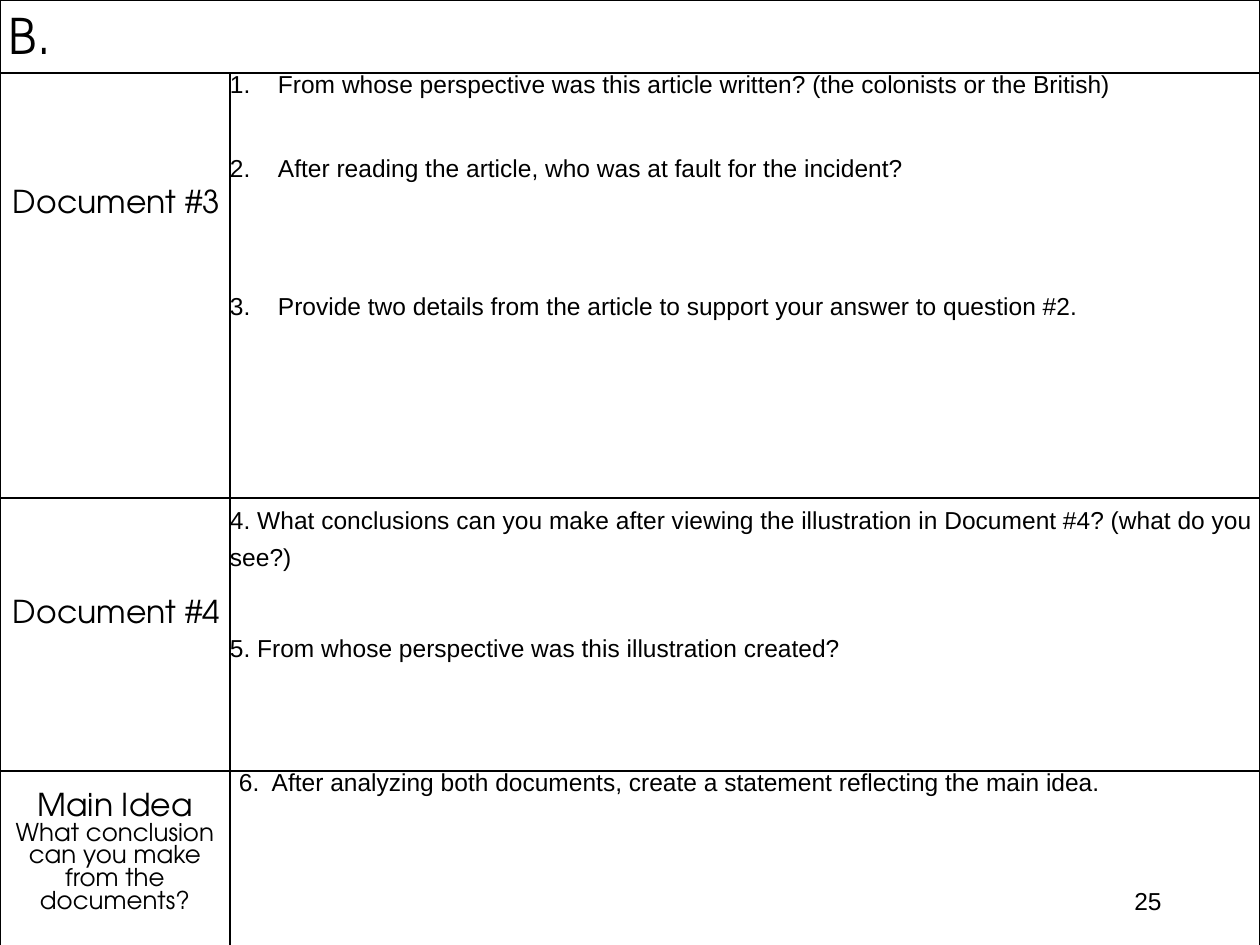
"""Builds a worksheet slide with questions on two documents and their main idea."""
from lxml import etree
from pptx import Presentation
from pptx import util as u
from pptx.dml.color import RGBColor
from pptx.enum import text
from pptx.oxml import ns


class Theme:
    ink = RGBColor(0, 0, 0)
    head = "TeX Gyre Adventor"
    body = "Arial"
    large, mid, small = u.Pt(28), u.Pt(18), u.Pt(14)
    rule = u.Pt(1)


def px(n):
    return u.Emu(round(n * 914400 / 126))


def write(para, words, font, size, lead=1.0, gap=0, left=0, hang=0):
    run = para.add_run()
    run.text = words
    run.font.name, run.font.size = font, size
    run.font.color.rgb = Theme.ink
    para.line_spacing = lead
    para.space_before = px(gap)
    props = para._p.get_or_add_pPr()
    props.set("marL", str(px(left)))
    props.set("indent", str(-px(hang)))
    if hang:
        mark = etree.SubElement(props, ns.qn("a:buAutoNum"))
        mark.set("type", "arabicPeriod")


deck = Presentation()
deck.slide_width, deck.slide_height = px(1260), px(945)
slide = deck.slides.add_slide(deck.slide_layouts[6])

box = slide.shapes.add_textbox(px(890), px(876), px(284), px(50))
frame = box.text_frame
frame.word_wrap = True
frame.vertical_anchor = text.MSO_ANCHOR.MIDDLE
page = frame.paragraphs[0]
write(page, "25", Theme.body, Theme.small)
page.alignment = text.PP_ALIGN.RIGHT

wide, high = (230, 1030), (73, 425, 273, 183)
grid = slide.shapes.add_table(len(high), len(wide), 0, 0, px(sum(wide)), px(sum(high))).table
grid.first_row = grid.horz_banding = False
for col, width in zip(grid.columns, wide):
    col.width = px(width)
for row, height in zip(grid.rows, high):
    row.height = px(height)

for cell in grid.iter_cells():
    cell.margin_left = cell.margin_right = cell.margin_top = cell.margin_bottom = 0
    props = cell._tc.get_or_add_tcPr()
    for side in "LRTB":
        line = etree.SubElement(props, ns.qn("a:ln" + side), w=str(Theme.rule))
        fill = etree.SubElement(line, ns.qn("a:solidFill"))
        etree.SubElement(fill, ns.qn("a:srgbClr"), val=str(Theme.ink))
    cell.fill.background()
grid.cell(0, 0).merge(grid.cell(0, 1))

# row, column, top margin, alignment, then (words, font, size, lead, gap, left, hang)
left, mid = text.PP_ALIGN.LEFT, text.PP_ALIGN.CENTER
head, body, small = Theme.head, Theme.body, Theme.small
cells = [
    (0, 0, 32, left, [("B.", head, Theme.large, u.Pt(18.4), 0, 9)]),
    (1, 0, 117, left, [("Document #3", head, Theme.mid, 1.0, 0, 13)]),
    (1, 1, 0, left, [
        ("From whose perspective was this article written? (the colonists or the British)",
         body, small, u.Pt(14.8), 0, 48, 48),
        ("After reading the article, who was at fault for the incident?",
         body, small, 1.0, 56, 48, 48),
        ("Provide two details from the article to support your answer to question #2.",
         body, small, 1.0, 111, 48, 48)]),
    (2, 0, 105, left, [("Document #4", head, Theme.mid, u.Pt(15), 0, 13)]),
    (2, 1, 0, left, [
        ("4. What conclusions can you make after viewing the illustration in "
         "Document #4? (what do you see?)", body, small, 1.34),
        ("5. From whose perspective was this illustration created?", body, small, 1.0, 64)]),
    (3, 0, 26, mid, [
        ("Main Idea", head, Theme.mid, u.Pt(14.9)),
        ("What conclusion can you make from the documents?", head, small)]),
    (3, 1, 0, left, [
        ("6.  After analyzing both documents, create a statement reflecting the main idea.",
         body, small, u.Pt(14.5), 0, 9)]),
]
for row, col, top, align, lines in cells:
    cell = grid.cell(row, col)
    cell.margin_top = px(top)
    frame = cell.text_frame
    for i, line in enumerate(lines):
        para = frame.add_paragraph() if i else frame.paragraphs[0]
        write(para, *line)
        para.alignment = align

deck.save("out.pptx")
